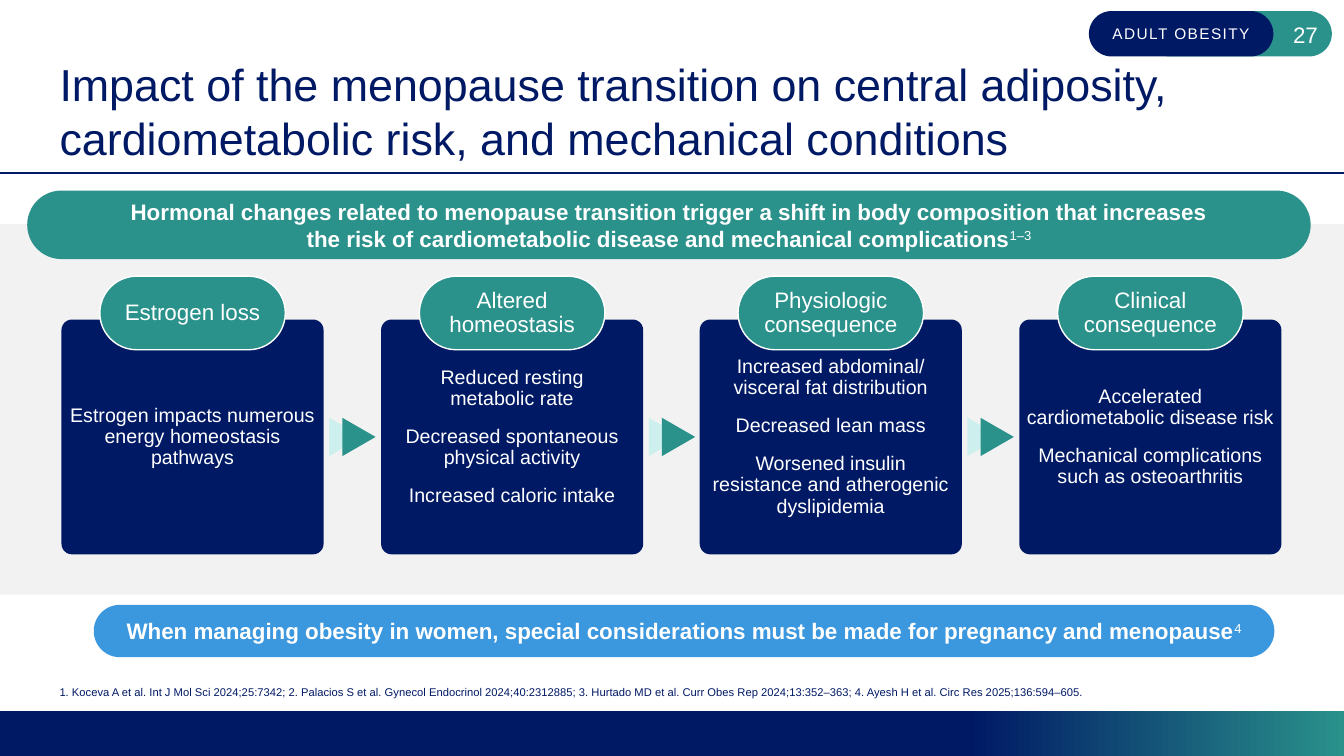
from lxml.etree import SubElement
from pptx import Presentation
from pptx.dml.color import RGBColor
from pptx.enum.shapes import MSO_CONNECTOR, MSO_SHAPE
from pptx.enum.text import MSO_ANCHOR, MSO_AUTO_SIZE, PP_ALIGN
from pptx.oxml.ns import qn
from pptx.util import Emu, Pt

COLORS = {
    "navy": "001965",
    "teal": "2A918B",
    "mint": "CDF0EE",
    "blue": "3B97DE",
    "grey": "F2F2F2",
    "white": "FFFFFF",
}
FONT = "Arial"
PX = 9144

STEPS = [
    ("Estrogen loss", ["Estrogen impacts numerous energy homeostasis pathways"]),
    ("Altered homeostasis", [
        "Reduced resting\nmetabolic rate",
        "Decreased spontaneous physical activity",
        "Increased caloric intake",
    ]),
    ("Physiologic consequence", [
        "Increased abdominal/\nvisceral fat distribution",
        "Decreased lean mass",
        "Worsened insulin\nresistance and atherogenic dyslipidemia",
    ]),
    ("Clinical consequence", [
        "Accelerated\ncardiometabolic disease risk",
        "Mechanical complications such as osteoarthritis",
    ]),
]


def px(n):
    return Emu(n * PX)


def rgb(name):
    return RGBColor.from_string(COLORS[name])


def write(tf, *texts, size=16, color="white", bold=False, align=PP_ALIGN.CENTER,
          anchor=MSO_ANCHOR.MIDDLE, inset=(8, 4), leading=None, after=0,
          sup=None, tracking=None):
    tf.word_wrap = True
    tf.auto_size = MSO_AUTO_SIZE.NONE
    tf.vertical_anchor = anchor
    tf.margin_left = tf.margin_right = px(inset[0])
    tf.margin_top = tf.margin_bottom = px(inset[1])

    def add_run(p, text, weight):
        r = p.add_run()
        r.text = text
        r.font.name, r.font.size, r.font.bold = FONT, Pt(size), weight
        r.font.color.rgb = rgb(color)
        return r

    for i, text in enumerate(texts):
        p = tf.add_paragraph() if i else tf.paragraphs[0]
        p.alignment = align
        p.space_before, p.space_after = Pt(0), Pt(after)
        if leading:
            p.line_spacing = leading
        for j, line in enumerate(text.split("\n")):
            if j:
                p.add_line_break()
            r = add_run(p, line, bold)
            if tracking:
                r.font._element.set("spc", str(tracking * 100))
    if sup:
        add_run(p, sup, False).font._element.set("baseline", "30000")


class Deck:
    """Style and current slide, with a method for each kind of element."""

    def __init__(self, width, height):
        self.prs = Presentation()
        self.prs.slide_width, self.prs.slide_height = px(width), px(height)
        self.s = self.prs.slides.add_slide(self.prs.slide_layouts[1])

    def place(self, sp, box):
        sp.left, sp.top, sp.width, sp.height = map(px, box)

    def title(self, text, box):
        sp = self.s.shapes.title
        self.place(sp, box)
        write(sp.text_frame, text, size=32, color="navy", align=PP_ALIGN.LEFT,
              anchor=MSO_ANCHOR.BOTTOM, inset=(0, 0))

    def references(self, text, box):
        sp = self.s.placeholders[1]
        self.place(sp, box)
        pPr = sp.text_frame.paragraphs[0]._p.get_or_add_pPr()
        pPr.set("marL", "0")
        pPr.set("indent", "0")
        SubElement(pPr, qn("a:buNone"))
        write(sp.text_frame, text, size=8, color="navy", align=PP_ALIGN.LEFT,
              anchor=MSO_ANCHOR.BOTTOM, inset=(0, 0), after=3)

    def shape(self, kind, box, fill, line=None, radius=None, rotation=0):
        sp = self.s.shapes.add_shape(kind, *map(px, box))
        sp.shadow.inherit = False
        sp.fill.solid()
        sp.fill.fore_color.rgb = rgb(fill)
        if line:
            sp.line.color.rgb = rgb(line)
            sp.line.width = Pt(1)
        else:
            sp.line.fill.background()
        if radius is not None:
            sp.adjustments[0] = radius
        sp.rotation = rotation
        return sp

    def pill(self, box, fill, *texts, line=None, **fmt):
        sp = self.shape(MSO_SHAPE.ROUNDED_RECTANGLE, box, fill, line, radius=0.5)
        if texts:
            write(sp.text_frame, *texts, **fmt)

    def card(self, box, texts):
        sp = self.shape(MSO_SHAPE.ROUNDED_RECTANGLE, box, "navy", radius=0.045)
        write(sp.text_frame, *texts, size=14, inset=(0, 0), leading=0.9, after=12)

    def arrow(self, x, y):
        for dx, fill in ((0, "mint"), (13, "teal")):
            self.shape(MSO_SHAPE.ISOSCELES_TRIANGLE, (x + dx, y, 38, 33), fill, rotation=90)

    def gradient_band(self, box, start, end):
        sp = self.shape(MSO_SHAPE.RECTANGLE, box, start)
        sp.fill.gradient()
        sp.fill.gradient_angle = 0
        for stop, name, pos in zip(sp.fill.gradient_stops, (start, end), (0.72, 1)):
            stop.color.rgb = rgb(name)
            stop.position = pos

    def rule(self, x1, x2, y):
        c = self.s.shapes.add_connector(MSO_CONNECTOR.STRAIGHT, px(x1), px(y), px(x2), px(y))
        c.line.color.rgb = rgb("navy")
        c.line.width = Pt(1.5)
        SubElement(c._element.spPr, qn("a:effectLst"))

    def text(self, box, text, **fmt):
        write(self.s.shapes.add_textbox(*map(px, box)).text_frame, text, **fmt)


def main():
    d = Deck(1333, 750)
    d.gradient_band((0, 705, 1333, 45), "navy", "teal")
    d.rule(0, 1333, 172)
    d.pill((1138, 11, 183, 45), "teal")
    d.pill((1080, 11, 183, 45), "navy", "ADULT OBESITY", size=11, tracking=1)
    d.text((1254, 14, 63, 40), "27", align=PP_ALIGN.RIGHT, inset=(10, 5))
    d.shape(MSO_SHAPE.RECTANGLE, (0, 222, 1333, 368), "grey")
    d.title("Impact of the menopause transition on central adiposity, "
            "cardiometabolic risk, and mechanical conditions", (59, 45, 1192, 118))
    d.references("1. Koceva A et al. Int J Mol Sci 2024;25:7342; "
                 "2. Palacios S et al. Gynecol Endocrinol 2024;40:2312885; "
                 "3. Hurtado MD et al. Curr Obes Rep 2024;13:352–363; "
                 "4. Ayesh H et al. Circ Res 2025;136:594–605.", (59, 658, 1192, 35))
    for i, (heading, points) in enumerate(STEPS):
        x = round(61 + i * 950 / 3)
        d.card((x, 317, 260, 233), points)
        d.pill((x + 38, 274, 184, 73), "teal", heading, line="white",
               inset=(6, 5), leading=0.9)
        if i < len(STEPS) - 1:
            d.arrow(x + 263, 417)
    d.pill((27, 189, 1273, 68), "teal",
           "Hormonal changes related to menopause transition trigger a shift "
           "in body composition that increases\n"
           "the risk of cardiometabolic disease and mechanical complications",
           bold=True, sup="1–3")
    d.pill((93, 600, 1171, 52), "blue",
           "When managing obesity in women, special considerations must be made "
           "for pregnancy and menopause", bold=True, sup="4", inset=(10, 5))
    d.prs.save("out.pptx")


if __name__ == "__main__":
    main()
